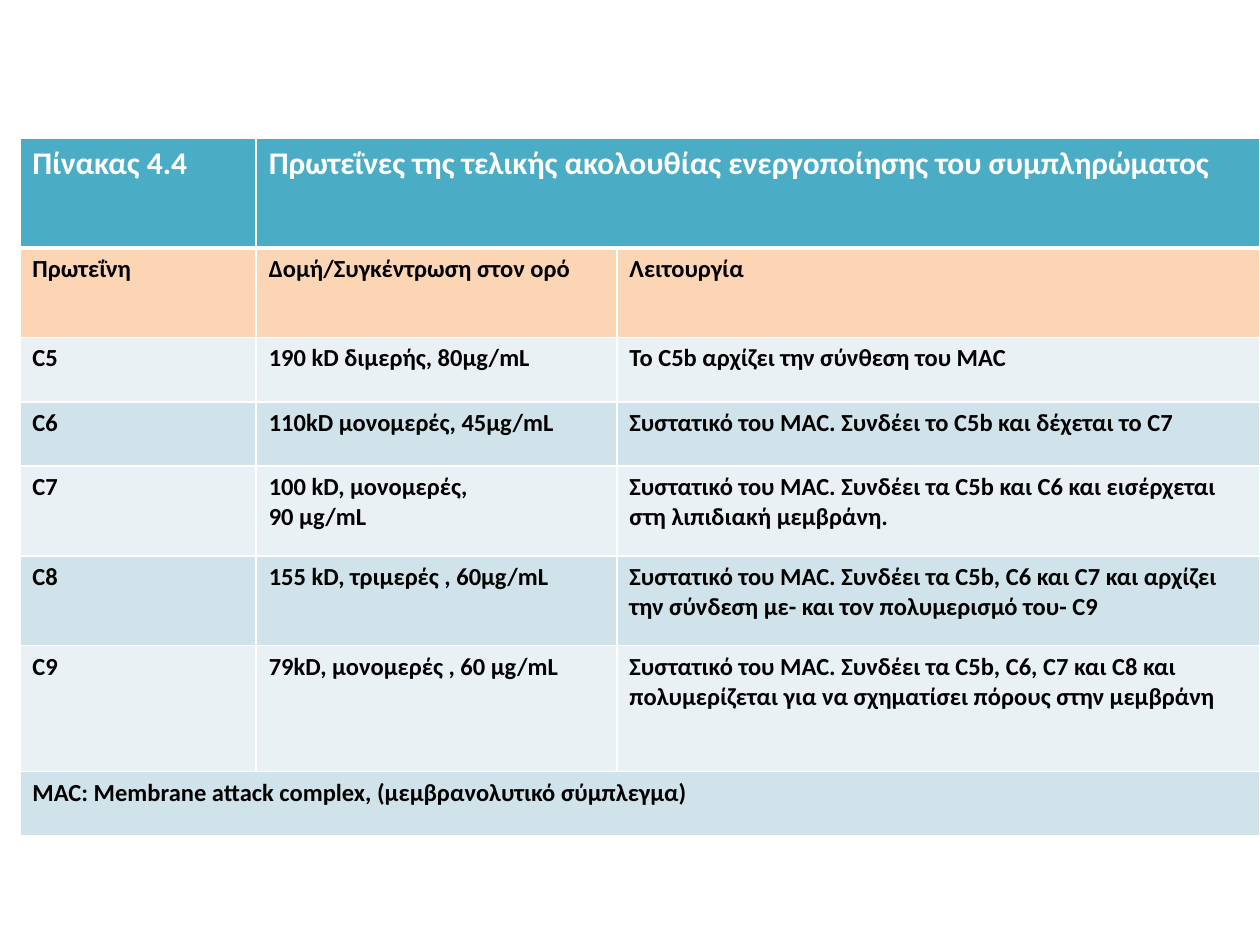
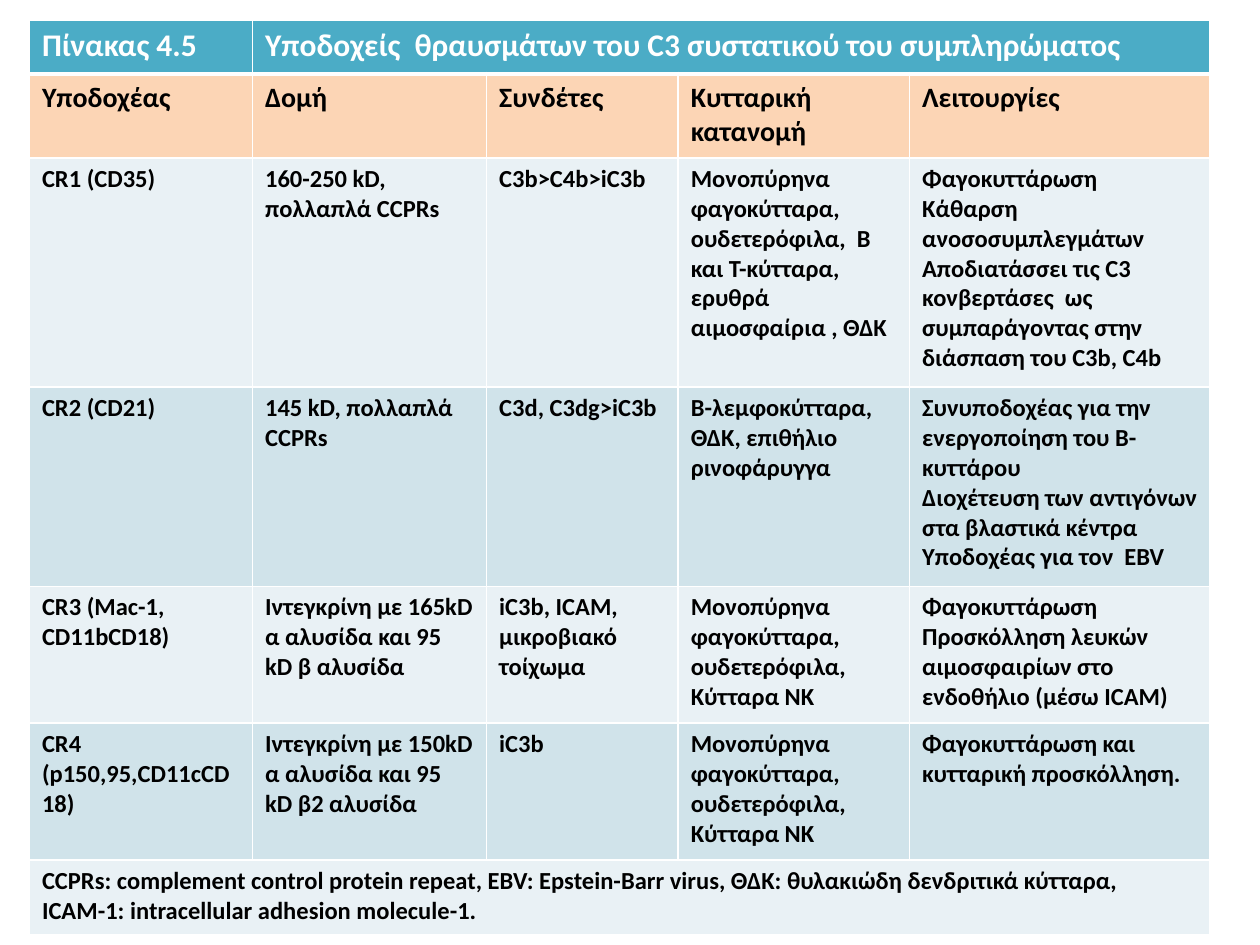
from lxml.etree import SubElement
from pptx import Presentation
from pptx.dml.color import RGBColor
from pptx.oxml.ns import qn
from pptx.util import Pt

WHITE = RGBColor(0xFF, 0xFF, 0xFF)
BLACK = RGBColor(0x00, 0x00, 0x00)
TEAL = RGBColor(0x4B, 0xAC, 0xC6)
PEACH = RGBColor(0xFC, 0xD5, 0xB5)
LIGHT_BAND = RGBColor(0xE9, 0xF1, 0xF5)
DARK_BAND = RGBColor(0xD0, 0xE3, 0xEA)

FONT = "Calibri"
TITLE_SIZE = 18
BODY_SIZE = 14
THIN, THICK = 1, 3

TERMINAL_PROTEINS = [
    ["Πίνακας 4.4", "Πρωτεΐνες της τελικής ακολουθίας ενεργοποίησης του συμπληρώματος"],
    ["Πρωτεΐνη", "Δομή/Συγκέντρωση στον ορό", "Λειτουργία"],
    ["C5", "190 kD διμερής, 80μg/mL", "Το C5b αρχίζει την σύνθεση του MAC"],
    ["C6", "110kD μονομερές, 45μg/mL",
     "Συστατικό του MAC. Συνδέει το C5b και δέχεται το C7"],
    ["C7", "100 kD, μονομερές,\n90 μg/mL",
     "Συστατικό του MAC. Συνδέει τα C5b και C6 και εισέρχεται στη λιπιδιακή μεμβράνη."],
    ["C8", "155 kD, τριμερές , 60μg/mL",
     "Συστατικό του MAC. Συνδέει τα C5b, C6 και C7 και αρχίζει την σύνδεση με- "
     "και τον πολυμερισμό του- C9"],
    ["C9", "79kD, μονομερές , 60 μg/mL",
     "Συστατικό του MAC. Συνδέει τα C5b, C6, C7 και C8 και πολυμερίζεται για να "
     "σχηματίσει πόρους στην μεμβράνη"],
    ["MAC: Membrane attack complex, (μεμβρανολυτικό σύμπλεγμα)"],
]

PHAGOCYTES_AND_NK = "Μονοπύρηνα φαγοκύτταρα, ουδετερόφιλα,\nΚύτταρα ΝΚ"

C3_RECEPTORS = [
    ["Πίνακας 4.5", "Υποδοχείς  θραυσμάτων του C3 συστατικού του συμπληρώματος"],
    ["Υποδοχέας", "Δομή", "Συνδέτες", "Κυτταρική κατανομή", "Λειτουργίες"],
    ["CR1 (CD35)", "160-250 kD, πολλαπλά CCPRs", "C3b>C4b>iC3b",
     "Μονοπύρηνα φαγοκύτταρα,  ουδετερόφιλα,  Β και Τ-κύτταρα, ερυθρά αιμοσφαίρια , ΘΔΚ",
     "Φαγοκυττάρωση\nΚάθαρση ανοσοσυμπλεγμάτων\n"
     "Αποδιατάσσει τις C3 κονβερτάσες  ως συμπαράγοντας στην διάσπαση του C3b, C4b"],
    ["CR2 (CD21)", "145 kD, πολλαπλά CCPRs", "C3d, C3dg>iC3b",
     "B-λεμφοκύτταρα, ΘΔΚ, επιθήλιο ρινοφάρυγγα",
     "Συνυποδοχέας για την ενεργοποίηση του Β-κυττάρου\n"
     "Διοχέτευση των αντιγόνων στα βλαστικά κέντρα Υποδοχέας για τον  EBV"],
    ["CR3 (Mac-1, CD11bCD18)", "Ιντεγκρίνη με 165kD α αλυσίδα και 95 kD β αλυσίδα",
     "iC3b, ICAM, μικροβιακό τοίχωμα", PHAGOCYTES_AND_NK,
     "Φαγοκυττάρωση\nΠροσκόλληση λευκών αιμοσφαιρίων στο ενδοθήλιο (μέσω ICAM)"],
    ["CR4 (p150,95,CD11cCD18)", "Ιντεγκρίνη με 150kD α αλυσίδα και 95 kD β2 αλυσίδα",
     "iC3b", PHAGOCYTES_AND_NK, "Φαγοκυττάρωση και κυτταρική προσκόλληση."],
    ["CCPRs: complement control protein repeat, EBV: Epstein-Barr virus, "
     "ΘΔΚ: θυλακιώδη δενδριτικά κύτταρα,\nICAM-1: intracellular adhesion molecule-1."],
]


def write_text(frame, text, size=BODY_SIZE, color=BLACK, bold=True):
    """Fill a text frame, one paragraph per line of text."""
    frame.text = text
    for para in frame.paragraphs:
        for span in para.runs:
            span.font.name = FONT
            span.font.size = Pt(size)
            span.font.bold = bold
            span.font.color.rgb = color


def draw_borders(cell, top, bottom):
    properties = cell._tc.get_or_add_tcPr()
    for side, width in (("L", THIN), ("R", THIN), ("T", top), ("B", bottom)):
        line = SubElement(properties, qn(f"a:ln{side}"), w=str(Pt(width)))
        fill = SubElement(line, qn("a:solidFill"))
        SubElement(fill, qn("a:srgbClr"), val=str(WHITE))


class TableDeck:
    def __init__(self):
        self.deck = Presentation()
        self.deck.slide_width, self.deck.slide_height = Pt(720), Pt(540)
        self.page = None

    def add_page(self):
        blank = self.deck.slide_layouts[6]
        self.page = self.deck.slides.add_slide(blank)

    def add_table(self, left, top, widths, heights, rows, heading_size):
        """Draw title, heading and banded rows; a short row's last cell spans the rest."""
        frame = self.page.shapes.add_table(
            len(rows), len(widths), Pt(left), Pt(top), Pt(sum(widths)), Pt(sum(heights)))
        table = frame.table
        for column, width in zip(table.columns, widths):
            column.width = Pt(width)
        for row, height in zip(table.rows, heights):
            row.height = Pt(height)
        for index, texts in enumerate(rows):
            for cell in table.rows[index].cells:
                self.style_cell(cell, index)
            if len(texts) < len(widths):
                table.cell(index, len(texts) - 1).merge(table.cell(index, len(widths) - 1))
            size = {0: TITLE_SIZE, 1: heading_size}.get(index, BODY_SIZE)
            color = WHITE if index == 0 else BLACK
            for position, text in enumerate(texts):
                write_text(table.cell(index, position).text_frame, text, size=size, color=color)

    def style_cell(self, cell, row_index):
        draw_borders(cell, top=THICK if row_index == 1 else THIN,
                     bottom=THICK if row_index == 0 else THIN)
        band = (LIGHT_BAND, DARK_BAND)[row_index % 2]
        cell.fill.solid()
        cell.fill.fore_color.rgb = {0: TEAL, 1: PEACH}.get(row_index, band)

    def save(self):
        self.deck.save("out.pptx")


def main():
    tables = TableDeck()
    tables.add_page()
    tables.add_table(11.3, 78.8, widths=[135.1, 206.1, 367.5],
                     heights=[63, 51, 36.8, 36.8, 51.3, 51.3, 72, 36.8],
                     rows=TERMINAL_PROTEINS, heading_size=14)
    tables.add_page()
    tables.add_table(16.8, 11.3, widths=[127.5, 133.8, 109.5, 132.2, 171.7],
                     heights=[31, 48, 131, 113.8, 78.2, 78.2, 43],
                     rows=C3_RECEPTORS, heading_size=16)
    tables.save()


if __name__ == "__main__":
    main()
